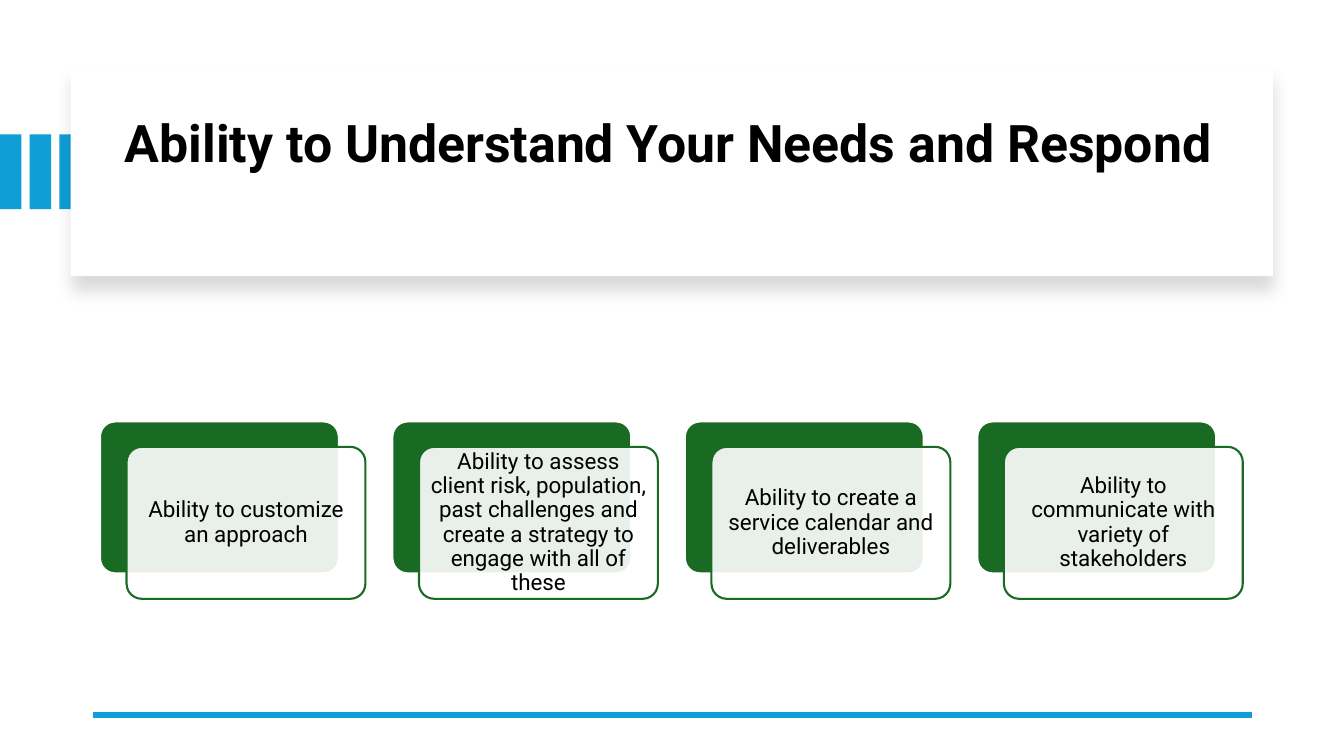
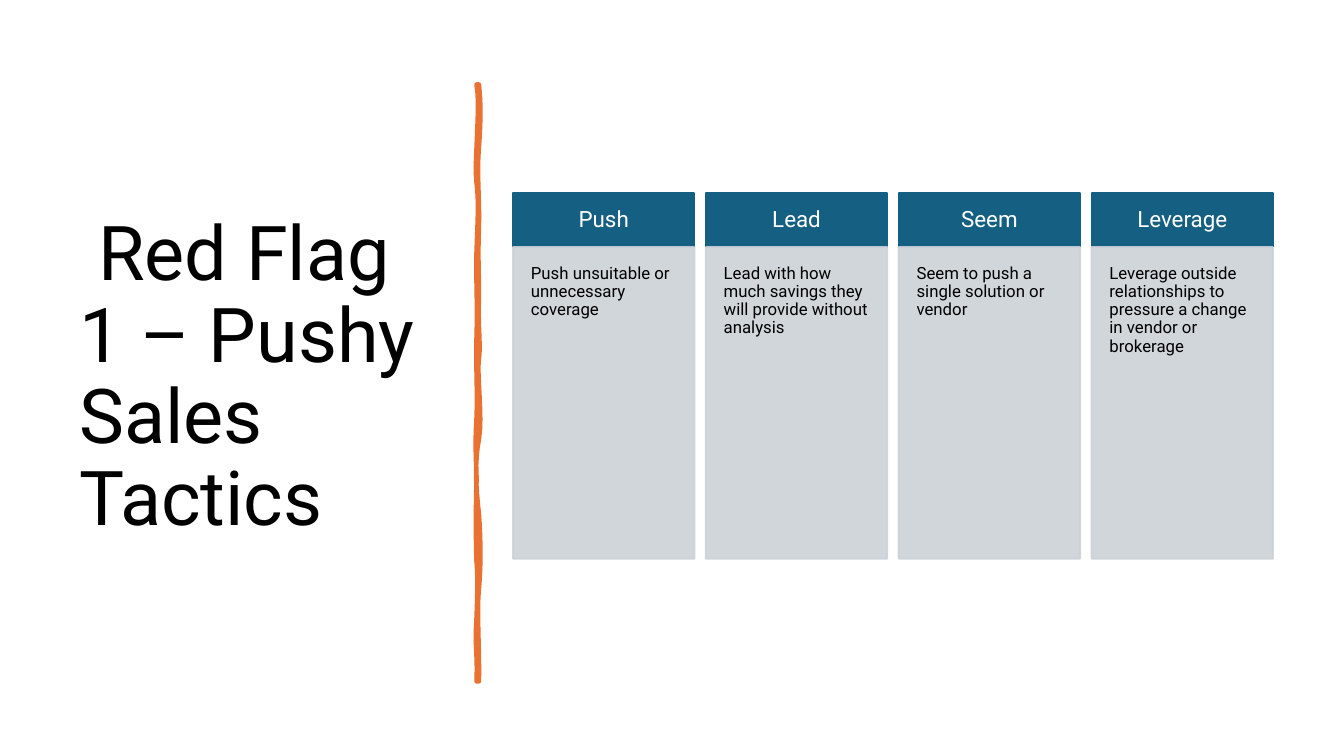
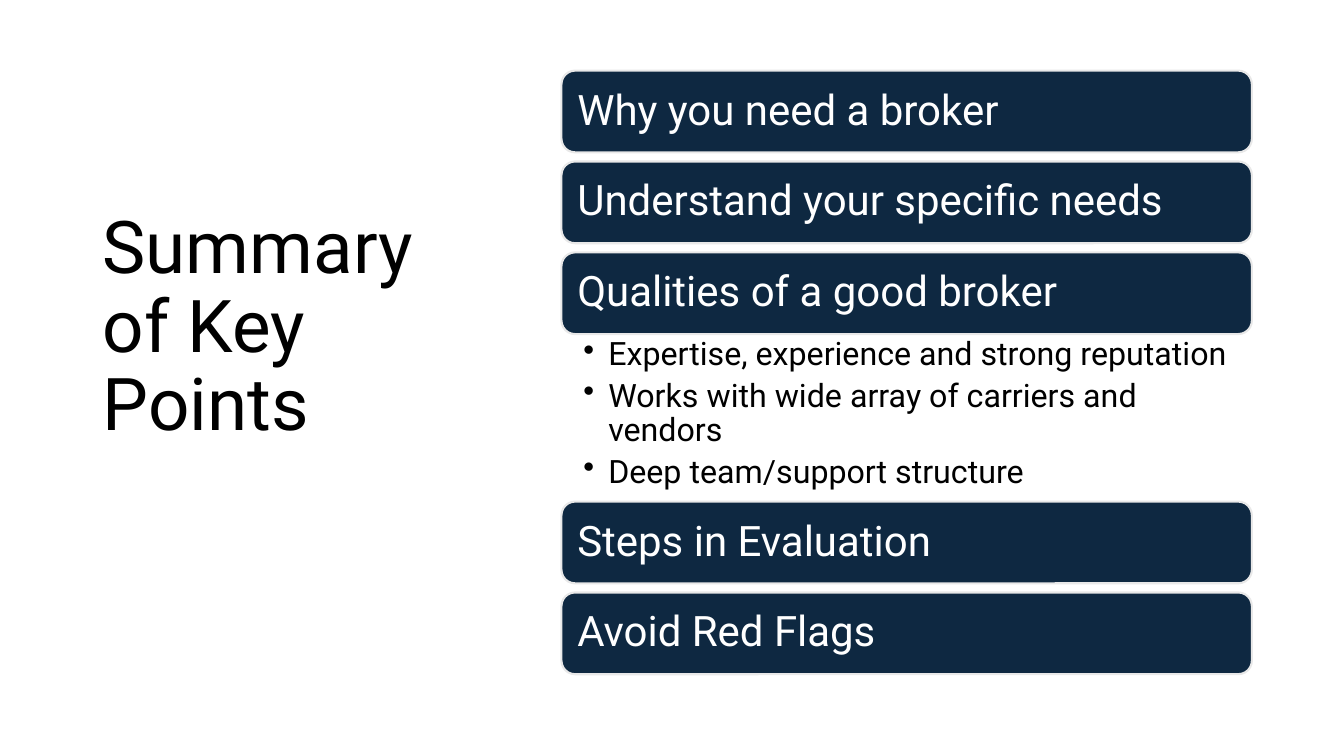
from dataclasses import dataclass

from pptx import Presentation
from pptx.dml.color import RGBColor
from pptx.enum.shapes import MSO_CONNECTOR as CONN, MSO_SHAPE as SHAPE
from pptx.enum.text import MSO_ANCHOR as ANCHOR, PP_ALIGN as ALIGN
from pptx.oxml import parse_xml
from pptx.oxml.ns import nsdecls, qn
from pptx.util import Cm, Pt


# Theme
@dataclass(frozen=True)
class Theme:
    font: str = "Roboto"
    black: str = "000000"
    white: str = "FFFFFF"
    sky: str = "0F9ED5"
    green: str = "196B24"
    orange: str = "E97132"
    teal: str = "156082"
    mist: str = "CCD2D8"
    navy: str = "0E2841"
    pale: str = "E8E8E8"
    banner: int = 37
    flag_title: int = 54
    summary_title: int = 52
    label: int = 16
    body: int = 12
    bar: int = 30
    bullet: int = 23
    leading: float = 0.9
    outline: float = 1.5


T = Theme()

# Content
NEEDS_TITLE = "Ability to Understand Your Needs and Respond"
NEEDS = [
    "Ability to customize an approach",
    "Ability to assess client risk, population, past challenges and "
    "create a strategy to engage with all of these",
    "Ability to create a service calendar and deliverables",
    "Ability to communicate with variety of stakeholders",
]

FLAG_TITLE = " Red Flag 1 – Pushy Sales Tactics"
TACTICS = [
    ("Push", "Push unsuitable or unnecessary coverage"),
    ("Lead", "Lead with how much savings they will provide without analysis"),
    ("Seem", "Seem to push a single solution or vendor"),
    ("Leverage", "Leverage outside relationships to pressure a change "
                 "in vendor or brokerage"),
]

SUMMARY_TITLE = "Summary of Key Points"
KEY_POINTS = [
    ("Why you need a broker", []),
    ("Understand your specific needs", []),
    ("Qualities of a good broker", [
        "Expertise, experience and strong reputation",
        "Works with wide array of carriers and vendors",
        "Deep team/support structure",
    ]),
    ("Steps in Evaluation", []),
    ("Avoid Red Flags", []),
]

# Hand-drawn divider: each edge is a start point, then curves of
# (control, control, end), all in cm
DIVIDER_EDGES = [
    ((12.07, 2.13), [
        ((12.12, 2.59), (12.12, 3.02), (12.07, 3.71)),
        ((12.01, 4.39), (12.09, 4.95), (12.07, 5.74)),
        ((12.04, 6.53), (12.07, 6.65), (12.07, 7.47)),
        ((12.04, 8.25), (12.12, 8.69), (12.07, 9.04)),
        ((12.01, 9.4), (12.17, 10.52), (12.07, 11.07)),
        ((11.96, 11.61), (11.99, 12.29), (12.07, 12.95)),
        ((12.12, 13.61), (12.12, 14.33), (12.07, 14.83)),
        ((12.01, 15.32), (12.09, 16.51), (12.07, 17.17)),
    ]),
    ((12.01, 17.17), [
        ((12.04, 16.41), (11.96, 16.36), (12.01, 15.57)),
        ((12.04, 14.81), (12.04, 14.48), (12.01, 14.15)),
        ((11.99, 13.82), (11.99, 12.57), (12.01, 12.12)),
        ((12.01, 11.66), (11.96, 11.3), (12.01, 10.54)),
        ((12.04, 9.8), (11.99, 9.47), (12.01, 8.51)),
        ((12.04, 7.57), (11.99, 7.14), (12.01, 6.35)),
        ((12.04, 5.54), (12.07, 5.08), (12.01, 4.6)),
        ((11.94, 4.14), (12.12, 2.64), (12.01, 2.13)),
    ]),
]


# Helpers
def rgb(color):
    return RGBColor.from_string(color)


def paint(shape, fill, line=None, width=T.outline):
    shape.shadow.inherit = False
    shape.fill.solid()
    shape.fill.fore_color.rgb = rgb(fill)
    if line:
        shape.line.color.rgb = rgb(line)
        shape.line.width = Pt(width)
    else:
        shape.line.fill.background()


def add_box(s, kind, x, y, w, h, fill, line=None):
    sp = s.shapes.add_shape(kind, Cm(x), Cm(y), Cm(w), Cm(h))
    paint(sp, fill, line)
    return sp


def set_alpha(shape, percent, with_line=False):
    props = shape.element.spPr
    parents = [props, props.find(qn("a:ln"))] if with_line else [props]
    for parent in parents:
        color = parent.find(qn("a:solidFill")).find(qn("a:srgbClr"))
        color.append(parse_xml(
            f'<a:alpha {nsdecls("a")} val="{percent * 1000}"/>'))


def write(shape, lines, size, color=T.black, bold=False, align=ALIGN.LEFT,
          anchor=ANCHOR.MIDDLE, insets=(0.25, 0.13), after=0):
    tf = shape.text_frame
    tf.word_wrap = True
    tf.vertical_anchor = anchor
    tf.margin_left = tf.margin_right = Cm(insets[0])
    tf.margin_top = tf.margin_bottom = Cm(insets[1])
    for i, line in enumerate(lines):
        p = tf.add_paragraph() if i else tf.paragraphs[0]
        p.alignment = align
        p.line_spacing = T.leading
        p.space_after = Pt(after)
        r = p.add_run()
        r.text = line
        r.font.name = T.font
        r.font.size = Pt(size)
        r.font.bold = bold
        r.font.color.rgb = rgb(color)
    return tf


def add_text(s, x, y, w, h, lines, size, **style):
    box = s.shapes.add_textbox(Cm(x), Cm(y), Cm(w), Cm(h))
    return write(box, lines, size, **style)


def add_bullets(tf, indent):
    for p in tf.paragraphs:
        props = p._p.get_or_add_pPr()
        props.set("marL", str(Cm(indent)))
        props.set("indent", str(-Cm(indent)))
        props.append(parse_xml(f'<a:buChar {nsdecls("a")} char="•"/>'))


def curve_points(start, curves, steps=8):
    points = [start]
    for c1, c2, end in curves:
        begin = points[-1]
        for k in range(1, steps + 1):
            t = k / steps
            u = 1 - t
            points.append(tuple(
                u**3 * a + 3 * u * u * t * b + 3 * u * t * t * c + t**3 * d
                for a, b, c, d in zip(begin, c1, c2, end)))
    return points


# Slide 1: banner title and four layered cards
def needs_slide(s):
    for i in range(3):
        add_box(s, SHAPE.RECTANGLE, 0.75 * i, 3.39, 0.54, 1.88, T.sky)
    banner = add_box(s, SHAPE.RECTANGLE, 1.78, 1.7, 30.3, 5.26, T.white)
    banner.element.spPr.find(qn("a:effectLst")).append(parse_xml(
        f'<a:outerShdw {nsdecls("a")} blurRad="{Pt(11)}" dist="{Pt(10)}" '
        f'dir="5400000" algn="t" rotWithShape="0"><a:srgbClr val="{T.black}">'
        '<a:alpha val="15000"/></a:srgbClr></a:outerShdw>'))
    add_text(s, 2.9, 2.26, 28.27, 2.8, [NEEDS_TITLE], T.banner, bold=True)

    rule = s.shapes.add_connector(
        CONN.STRAIGHT, Cm(31.55), Cm(18.01), Cm(2.34), Cm(18.01))
    rule.line.color.rgb = rgb(T.sky)
    rule.line.width = Pt(4.5)
    rule.element.spPr.append(parse_xml(f'<a:effectLst {nsdecls("a")}/>'))

    left, top, w, h, pitch = 2.52, 10.62, 6.02, 3.83, 7.37
    for i, need in enumerate(NEEDS):
        x = left + i * pitch
        back = add_box(s, SHAPE.ROUNDED_RECTANGLE, x, top, w, h,
                       T.green, T.white)
        front = add_box(s, SHAPE.ROUNDED_RECTANGLE, x + 0.67, top + 0.64, w, h,
                        T.white, T.green)
        for card in (back, front):
            card.adjustments[0] = 0.1
        set_alpha(front, 90)
        write(front, [need], T.label, align=ALIGN.CENTER, insets=(0.18, 0.18))


# Slide 2: title, divider and four headed columns
def flag_slide(s):
    add_text(s, 1.75, 1.78, 9.5, 15.52, [FLAG_TITLE], T.flag_title)

    outline = [(Cm(x), Cm(y)) for start, curves in DIVIDER_EDGES
               for x, y in curve_points(start, curves)]
    builder = s.shapes.build_freeform(*outline[0])
    builder.add_line_segments(outline[1:], close=True)
    paint(builder.convert_to_shape(), T.orange, T.orange, 3.25)

    left, top, w, pitch = 12.93, 4.86, 4.57, 4.86
    head_h, body_h = 1.37, 7.85
    for i, (heading, detail) in enumerate(TACTICS):
        x = left + i * pitch
        head = add_box(s, SHAPE.RECTANGLE, x, top, w, head_h, T.teal, T.teal)
        write(head, [heading], T.label, color=T.white, align=ALIGN.CENTER,
              insets=(0.36, 0.36))
        body = add_box(s, SHAPE.RECTANGLE, x, top + head_h, w, body_h,
                       T.mist, T.mist)
        set_alpha(body, 90, with_line=True)
        write(body, [detail], T.body, anchor=ANCHOR.TOP, insets=(0.45, 0.45))


# Slide 3: title and stacked bars with bullets
def summary_slide(s):
    add_text(s, 2.34, 1.55, 9.37, 13.46, [SUMMARY_TITLE], T.summary_title)

    x, y, w, bar_h, bullets_h, gap = 14.15, 1.78, 17.4, 2.06, 4.22, 0.23
    for point, bullets in KEY_POINTS:
        bar = add_box(s, SHAPE.ROUNDED_RECTANGLE, x, y, w, bar_h,
                      T.navy, T.pale)
        write(bar, [point], T.bar, color=T.white, insets=(0.3, 0.3))
        y += bar_h
        if bullets:
            tf = add_text(s, x, y, w, bullets_h, bullets, T.bullet,
                          anchor=ANCHOR.TOP, insets=(0.55, 0.1), after=4.6)
            add_bullets(tf, 0.63)
            y += bullets_h
        else:
            y += gap


def main():
    prs = Presentation()
    prs.slide_width, prs.slide_height = Cm(33.87), Cm(19.05)
    for build in (needs_slide, flag_slide, summary_slide):
        build(prs.slides.add_slide(prs.slide_layouts[6]))
    prs.save("out.pptx")


if __name__ == "__main__":
    main()
